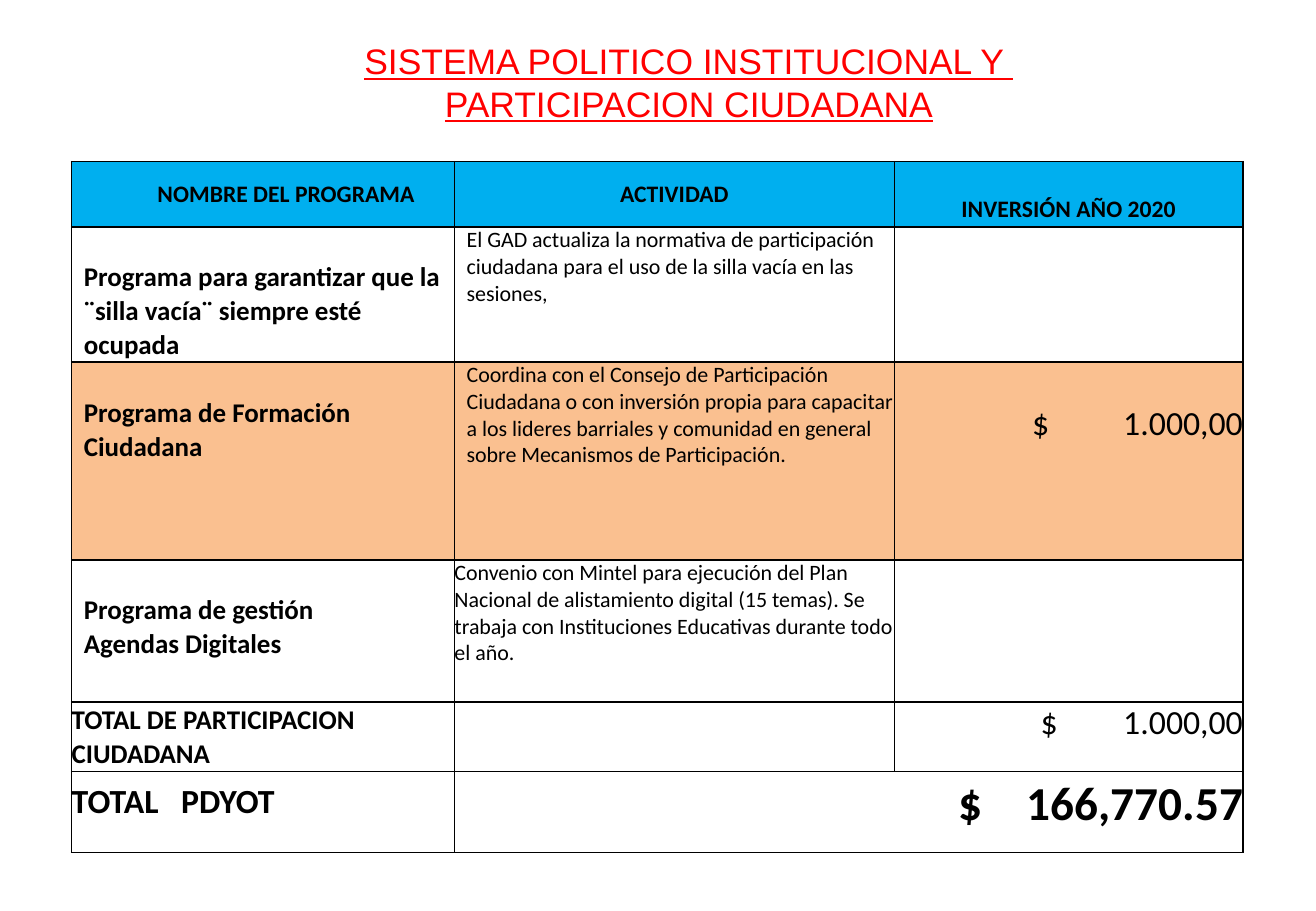
from dataclasses import dataclass

from lxml import etree
from pptx import Presentation
from pptx.dml.color import RGBColor
from pptx.enum.text import MSO_ANCHOR as Anchor, MSO_AUTO_SIZE as AutoSize, PP_ALIGN as Align
from pptx.oxml.ns import qn
from pptx.util import Inches, Pt


@dataclass(frozen=True)
class Theme:
    title_font: str = "Arial"
    table_font: str = "Calibri"
    red: str = "FF0000"
    black: str = "000000"
    blue: str = "00AFEF"
    orange: str = "FAC090"
    title: int = 21
    header: int = 14
    program: int = 16
    activity: int = 13
    amount: int = 20
    total: int = 28


THEME = Theme()


@dataclass(frozen=True)
class Entry:
    """Content of one table cell; lengths are in inches."""
    text: str = ""
    size: int = THEME.program
    bold: bool = False
    align: Align = Align.LEFT
    anchor: Anchor = Anchor.TOP
    left: float = 0
    top: float = 0
    right: float = 0
    bottom: float = 0
    spacing: float = 1.0
    tab: float = 0


def header(text, **margins):
    return Entry(text, THEME.header, True, Align.CENTER, Anchor.MIDDLE, **margins)


def program(text, spacing=1.03, right=0):
    return Entry(text, bold=True, left=0.1, top=0.27, right=right, spacing=spacing)


def activity(text, left=0.1):
    return Entry(text, THEME.activity, left=left)


def amount(text, tab, top=0):
    return Entry(text, THEME.amount, align=Align.RIGHT, top=top, tab=tab)


COLUMNS = [3.15, 3.62, 2.87]
ROW_HEIGHTS = [0.54, 1.11, 1.63, 1.17, 0.57, 0.67]
ROW_FILLS = {0: THEME.blue, 2: THEME.orange}
ROWS = [
    [header("NOMBRE DEL PROGRAMA", left=0.38), header("ACTIVIDAD"),
     header("INVERSIÓN AÑO 2020", top=0.24)],
    [program("Programa para garantizar que la ¨silla vacía¨ siempre esté ocupada"),
     activity("El GAD actualiza la normativa de participación ciudadana para el uso "
              "de la silla vacía en las sesiones,"),
     Entry()],
    [program("Programa de Formación Ciudadana", spacing=1.05),
     activity("Coordina con el Consejo de Participación Ciudadana o con inversión propia "
              "para capacitar a los lideres barriales y comunidad en general sobre "
              "Mecanismos de Participación."),
     amount("$\t1.000,00", tab=0.75, top=0.34)],
    [program("Programa de gestión Agendas Digitales", right=0.6),
     activity("Convenio con Mintel para ejecución del Plan Nacional de alistamiento digital "
              "(15 temas). Se trabaja con Instituciones Educativas durante todo el año.", left=0),
     Entry()],
    [Entry("TOTAL DE PARTICIPACION CIUDADANA", bold=True, spacing=1.05),
     Entry(), amount("$\t1.000,00", tab=0.68)],
    [Entry("TOTAL\tPDYOT", THEME.amount, True, anchor=Anchor.MIDDLE, bottom=0.17, tab=0.9),
     Entry(),
     Entry("$\t166,770.57", THEME.total, True, Align.RIGHT, Anchor.MIDDLE,
           bottom=0.13, tab=0.56)],
]


def style_run(run, font, size, color, bold=False, underline=False):
    run.font.name = font
    run.font.size = Pt(size)
    run.font.color.rgb = RGBColor.from_string(color)
    run.font.bold = bold
    run.font.underline = underline


def add_title(slide, lines):
    title = slide.shapes.title
    title.left, title.top = Inches(1.86), Inches(0.25)
    title.width, title.height = Inches(7.62), Inches(0.85)
    frame = title.text_frame
    frame.text = "\n".join(lines)
    frame.word_wrap = True
    frame.auto_size = AutoSize.NONE
    frame.vertical_anchor = Anchor.MIDDLE
    for paragraph in frame.paragraphs:
        paragraph.alignment = Align.CENTER
        for run in paragraph.runs:
            style_run(run, THEME.title_font, THEME.title, THEME.red, underline=True)


def set_borders(cell, hidden=""):
    """Draw the four cell edges, except the one whose letter is hidden."""
    properties = cell._tc.get_or_add_tcPr()
    for side in "LRTB":
        line = etree.SubElement(properties, qn(f"a:ln{side}"), w=str(Pt(1)))
        if side == hidden:
            etree.SubElement(line, qn("a:noFill"))
        else:
            fill = etree.SubElement(line, qn("a:solidFill"))
            etree.SubElement(fill, qn("a:srgbClr"), val=THEME.black)


def add_tab(paragraph, position):
    tabs = etree.SubElement(paragraph._p.get_or_add_pPr(), qn("a:tabLst"))
    etree.SubElement(tabs, qn("a:tab"), pos=str(Inches(position)), algn="l")


def fill_cell(cell, entry, color):
    cell.margin_left, cell.margin_right = Inches(entry.left), Inches(entry.right)
    cell.margin_top, cell.margin_bottom = Inches(entry.top), Inches(entry.bottom)
    cell.vertical_anchor = entry.anchor
    if color:
        cell.fill.solid()
        cell.fill.fore_color.rgb = RGBColor.from_string(color)
    else:
        cell.fill.background()
    if not entry.text:
        return
    paragraph = cell.text_frame.paragraphs[0]
    paragraph.text = entry.text
    if entry.tab:
        add_tab(paragraph, entry.tab)
    paragraph.alignment = entry.align
    paragraph.line_spacing = entry.spacing
    for run in paragraph.runs:
        style_run(run, THEME.table_font, entry.size, THEME.black, entry.bold)


def add_investment_table(slide):
    table = slide.shapes.add_table(
        len(ROWS), len(COLUMNS), Inches(0.59), Inches(1.33),
        Inches(sum(COLUMNS)), Inches(sum(ROW_HEIGHTS))).table
    table.first_row = table.horz_banding = False
    for column, width in zip(table.columns, COLUMNS):
        column.width = Inches(width)
    for row, height in zip(table.rows, ROW_HEIGHTS):
        row.height = Inches(height)
    open_edges = {(len(ROWS) - 1, 1): "R", (len(ROWS) - 1, 2): "L"}
    for r, entries in enumerate(ROWS):
        for c, entry in enumerate(entries):
            cell = table.cell(r, c)
            set_borders(cell, open_edges.get((r, c), ""))
            fill_cell(cell, entry, ROW_FILLS.get(r))


def main():
    deck = Presentation()
    deck.slide_width, deck.slide_height = Inches(10.83), Inches(7.5)
    slide = deck.slides.add_slide(deck.slide_layouts[5])
    add_title(slide, ["SISTEMA POLITICO INSTITUCIONAL Y ", "PARTICIPACION CIUDADANA"])
    add_investment_table(slide)
    deck.save("out.pptx")


if __name__ == "__main__":
    main()
